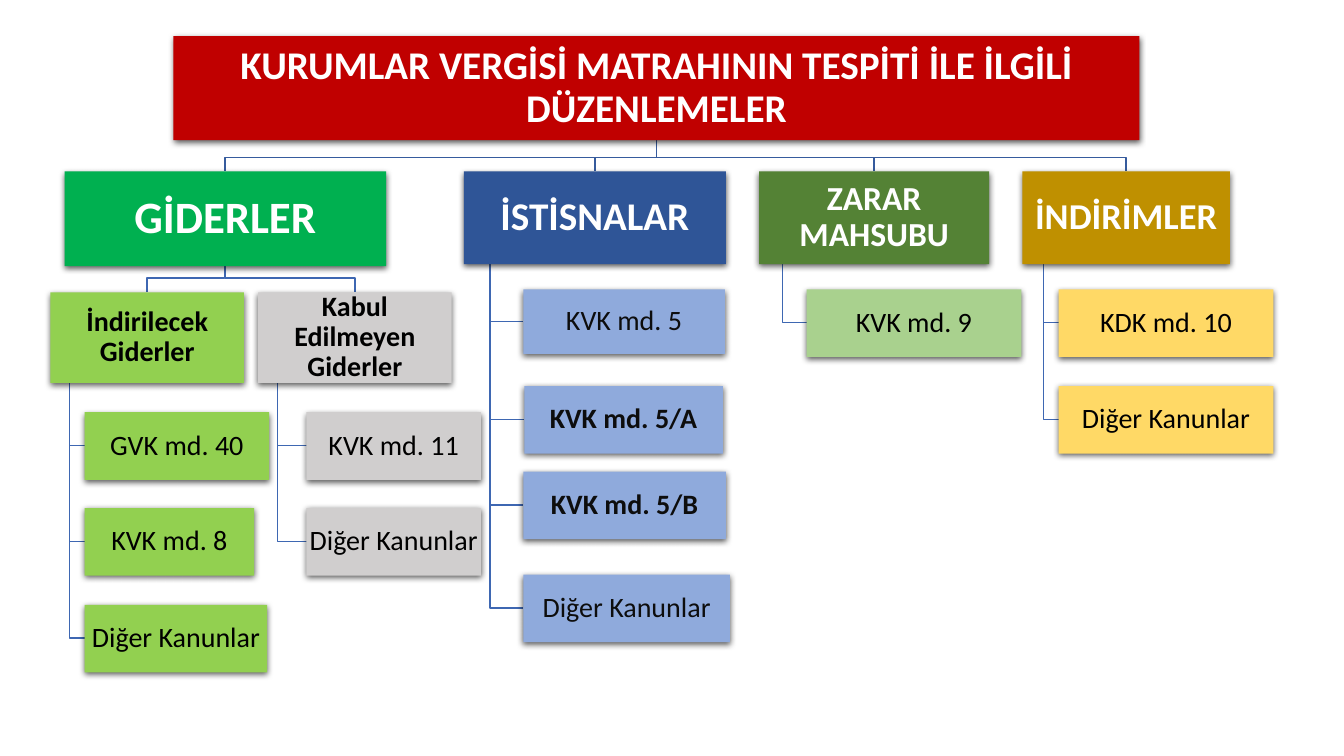
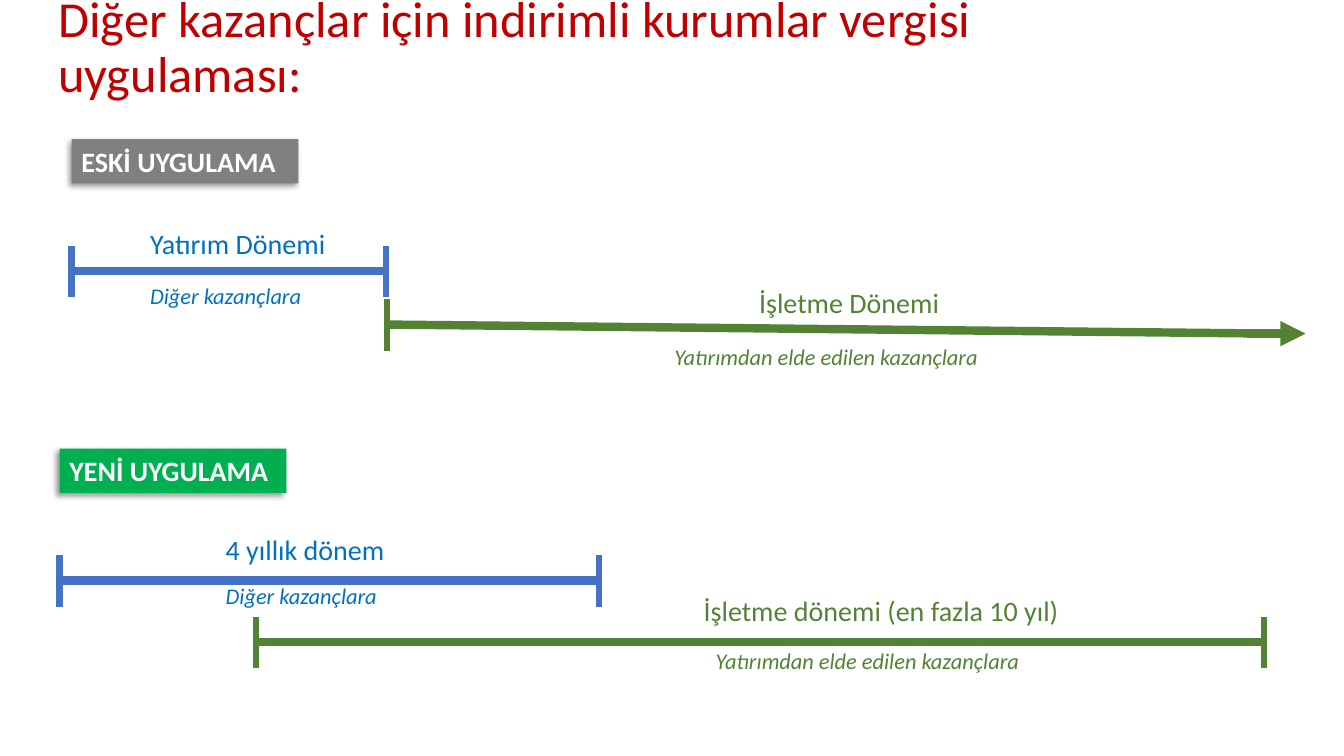
from lxml.etree import SubElement
from pptx import Presentation
from pptx.dml.color import RGBColor
from pptx.enum.shapes import MSO_CONNECTOR, MSO_SHAPE
from pptx.enum.text import MSO_ANCHOR as ANCHOR, PP_ALIGN as ALIGN
from pptx.oxml.ns import qn
from pptx.util import Pt

PX = 9144  # one px is a hundredth of an inch
FONT = "Calibri"

WHITE = RGBColor(0xFF, 0xFF, 0xFF)
BLACK = RGBColor(0x00, 0x00, 0x00)
SOFT_BLACK = RGBColor(0x0D, 0x0D, 0x0D)
RED = RGBColor(0xC0, 0x00, 0x00)
GREEN = RGBColor(0x00, 0xB0, 0x50)
LIME = RGBColor(0x92, 0xD0, 0x50)
SILVER = RGBColor(0xD0, 0xCE, 0xCE)
GRAY = RGBColor(0x80, 0x80, 0x80)
NAVY = RGBColor(0x2F, 0x55, 0x97)
PALE_BLUE = RGBColor(0x8F, 0xAA, 0xDC)
FOREST = RGBColor(0x54, 0x82, 0x35)
PALE_GREEN = RGBColor(0xA9, 0xD1, 0x8E)
GOLD = RGBColor(0xBF, 0x90, 0x00)
PALE_GOLD = RGBColor(0xFF, 0xD9, 0x66)
BLUE = RGBColor(0x44, 0x72, 0xC4)
TEXT_BLUE = RGBColor(0x00, 0x70, 0xC0)
ROOT_LINE = RGBColor(0x36, 0x5B, 0x9D)
BRANCH_LINE = RGBColor(0x3E, 0x67, 0xB2)

# Shadows: blur and distance in points, angle in degrees, opacity in percent
CHART_SHADOW = (4.5, 1.5, 90, 63)
TAG_SHADOW = (4, 3, 135, 40)


def add_box(page, area, spans, color, bold=False, italic=False, fill=None,
            shadow=None, inset=None, align=ALIGN.LEFT, anchor=ANCHOR.TOP,
            spacing=1.0):
    """Add a text box, or a shadowed rectangle if a fill is given."""
    place = [length * PX for length in area]
    if fill is None:
        box = page.shapes.add_textbox(*place)
    else:
        box = page.shapes.add_shape(MSO_SHAPE.RECTANGLE, *place)
        box.fill.solid()
        box.fill.fore_color.rgb = fill
        box.line.fill.background()
        box.shadow.inherit = False
        blur, distance, angle, opacity = shadow
        effects = box._element.spPr.find(qn("a:effectLst"))
        outer = SubElement(effects, qn("a:outerShdw"), blurRad=str(Pt(blur)),
                           dist=str(Pt(distance)), dir=str(angle * 60000),
                           algn="ctr", rotWithShape="0")
        tint = SubElement(outer, qn("a:srgbClr"), val=str(BLACK))
        SubElement(tint, qn("a:alpha"), val=str(opacity * 1000))
    frame = box.text_frame
    frame.word_wrap = True
    frame.vertical_anchor = anchor
    if inset is not None:
        frame.margin_left = frame.margin_right = inset * PX
        frame.margin_top = frame.margin_bottom = inset * PX
    para = frame.paragraphs[0]
    para.alignment = align
    para.line_spacing = spacing
    for text, size in spans:
        span = para.add_run()
        span.text = text
        span.font.name = FONT
        span.font.size = Pt(size)
        span.font.bold = bold
        span.font.italic = italic
        span.font.color.rgb = color


def add_bar(page, start, end, color, width, arrow=False):
    """Add a straight line, with an arrowhead at its end if asked."""
    points = [value * PX for value in (*start, *end)]
    bar = page.shapes.add_connector(MSO_CONNECTOR.STRAIGHT, *points)
    bar.line.color.rgb = color
    bar.line.width = Pt(width)
    if arrow:
        SubElement(bar.line._get_or_add_ln(), qn("a:tailEnd"), type="triangle")
    SubElement(bar._element.spPr, qn("a:effectLst"))


deck = Presentation()
deck.slide_width = 1333 * PX
deck.slide_height = 750 * PX
blank = deck.slide_layouts[6]

# Slide 1: organisation chart
page = deck.slides.add_slide(blank)
root = (172, 36, 958, 103)
expenses = (64, 170, 319, 94)
deductible = (50, 290, 192, 90)
disallowed = (256, 290, 192, 90)
exemptions = (460, 170, 260, 92)
losses = (753, 170, 228, 92)
reductions = (1014, 170, 206, 92)

heads = [  # area, spans, fill, text colour, inset
    (root, [("KURUMLAR VERGİSİ MATRAHININ TESPİTİ İLE İLGİLİ DÜZENLEMELER", 28)],
     RED, WHITE, 2),
    (expenses, [("GİDERLER", 32)], GREEN, WHITE, 2),
    (deductible, [("İndirilecek Giderler", 20)], LIME, BLACK, 1),
    (disallowed, [("Kabul Edilmeyen Giderler", 20)], SILVER, BLACK, 1),
    (exemptions, [("İSTİSNALAR", 28)], NAVY, WHITE, 2),
    (losses, [("ZARAR", 24), (" ", 20), ("MAHSUBU", 24)], FOREST, WHITE, 2),
    (reductions, [("İNDİRİMLER", 26)], GOLD, WHITE, 2),
]
OTHER_LAWS = "Diğer Kanunlar"
branches = [  # head, leaf fill, text colour, leaves (text, area, bold)
    (deductible, LIME, BLACK, [
        ("GVK md. 40", (84, 409, 183, 67), False),
        ("KVK md. 8", (84, 504, 168, 67), False),
        (OTHER_LAWS, (84, 600, 181, 67), False)]),
    (disallowed, SILVER, BLACK, [
        ("KVK md. 11", (304, 409, 173, 67), False),
        (OTHER_LAWS, (304, 504, 173, 67), False)]),
    (exemptions, PALE_BLUE, SOFT_BLACK, [
        ("KVK md. 5", (519, 287, 200, 64), False),
        ("KVK md. 5/A", (520, 383, 197, 67), True),
        ("KVK md. 5/B", (519, 468, 201, 67), True),
        (OTHER_LAWS, (519, 570, 205, 67), False)]),
    (losses, PALE_GREEN, BLACK, [
        ("KVK md. 9", (800, 287, 213, 67), False)]),
    (reductions, PALE_GOLD, BLACK, [
        ("KDK md. 10", (1050, 287, 213, 67), False),
        (OTHER_LAWS, (1050, 383, 213, 67), False)]),
]

# Routes from a head down to the heads below it, then to its leaves
routes = []
for parent, bus, children, color in [
        (root, 156, (expenses, exemptions, losses, reductions), ROOT_LINE),
        (expenses, 276, (deductible, disallowed), BRANCH_LINE)]:
    middle = parent[0] + parent[2] // 2
    for left, top, width, height in children:
        center = left + width // 2
        routes.append((color, [(middle, parent[1] + parent[3]), (middle, bus),
                               (center, bus), (center, top)]))
for head, fill, color, leaves in branches:
    trunk = head[0] + round(head[2] / 10)
    for text, (left, top, width, height), bold in leaves:
        middle = top + height // 2
        routes.append((BRANCH_LINE, [(trunk, head[1] + head[3]),
                                     (trunk, middle), (left, middle)]))
for color, points in routes:
    builder = page.shapes.build_freeform(*points[0], scale=PX)
    builder.add_line_segments(points[1:], close=False)
    route = builder.convert_to_shape()
    route.fill.background()
    route.line.color.rgb = color
    route.line.width = Pt(1)
    route.shadow.inherit = False

# Boxes over the routes
chart_style = dict(shadow=CHART_SHADOW, align=ALIGN.CENTER,
                   anchor=ANCHOR.MIDDLE, spacing=0.9)
for area, spans, fill, color, inset in heads:
    add_box(page, area, spans, color, bold=True, fill=fill, inset=inset,
            **chart_style)
for head, fill, color, leaves in branches:
    for text, area, bold in leaves:
        add_box(page, area, [(text, 20)], color, bold=bold, fill=fill, inset=1,
                **chart_style)

# Slide 2: timelines
page = deck.slides.add_slide(blank)
add_box(page, (48, 23, 1172, 51),
        [("Diğer kazançlar için indirimli kurumlar vergisi uygulaması:", 36)],
        RED, anchor=ANCHOR.MIDDLE, spacing=0.9)

# Bars with their upright end ticks
for start, end, ticks, color in [
        ((71, 269), (383, 269), (71, 383), BLUE),
        ((383, 322), (1266, 331), (384,), FOREST),
        ((59, 576), (594, 576), (59, 594), BLUE),
        ((252, 637), (1254, 637), (254, 1254), FOREST)]:
    add_bar(page, start, end, color, 6)
    for x in ticks:
        add_bar(page, (x, start[1] - 25), (x, start[1] + 26), color, 4.5)
add_bar(page, (1237, 331), (1295, 331), FOREST, 6, arrow=True)

# Tags
for text, left, top, fill in [("ESKİ UYGULAMA", 71, 138, GRAY),
                              ("YENİ UYGULAMA", 59, 445, GREEN)]:
    add_box(page, (left, top, 225, 44), [(text, 20)], WHITE, bold=True,
            fill=fill, shadow=TAG_SHADOW)

# Period names above the bars, earnings below them
for text, left, top, width, color in [
        ("Yatırım Dönemi", 139, 220, 225, TEXT_BLUE),
        ("İşletme Dönemi", 743, 278, 225, FOREST),
        ("4 yıllık dönem", 214, 523, 225, TEXT_BLUE),
        ("İşletme dönemi (en fazla 10 yıl)", 688, 584, 532, FOREST)]:
    add_box(page, (left, top, width, 44), [(text, 20)], color)
for text, left, top, width, color in [
        ("Diğer kazançlara", 139, 275, 225, TEXT_BLUE),
        ("Yatırımdan elde edilen kazançlara", 659, 336, 442, FOREST),
        ("Diğer kazançlara", 214, 573, 225, TEXT_BLUE),
        ("Yatırımdan elde edilen kazançlara", 700, 637, 442, FOREST)]:
    add_box(page, (left, top, width, 37), [(text, 16)], color, italic=True)

deck.save("out.pptx")
